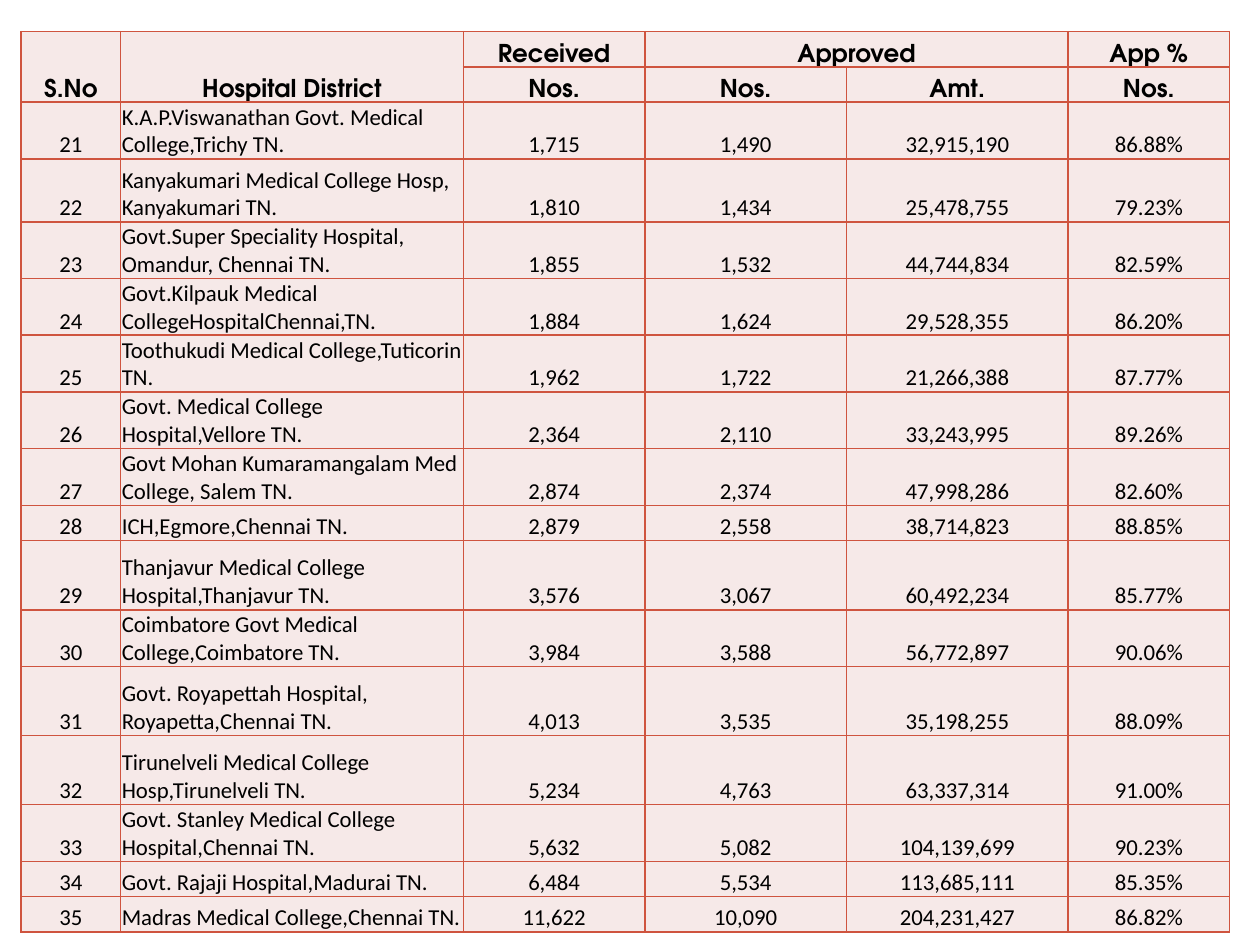
from pptx import Presentation
from pptx.dml.color import RGBColor
from pptx.enum import text
from pptx.oxml import parse_xml
from pptx.oxml.ns import nsdecls
from pptx.util import Pt

COLORS = {"border": "CF543F", "fill": "F6E9E8", "ink": "000000"}
HEADER_FONT = {"name": "TeX Gyre Adventor", "size": Pt(14), "bold": True}
BODY_FONT = {"name": "Calibri", "size": Pt(13), "bold": False}
CELL_FORMAT = {
    "margin_left": Pt(0.7), "margin_top": Pt(0.7),
    "margin_right": Pt(0.7), "margin_bottom": Pt(0),
    "vertical_anchor": text.MSO_ANCHOR.BOTTOM,
}

COLUMN_WIDTHS = [57, 195.8, 103.7, 115.2, 126.7, 92.2]
SINGLE, DOUBLE = 20.2, 31.7  # row heights for one and two lines of text
HEADERS = [
    ["S.No", "Hospital District", "Received", "Approved", "", "App %"],
    ["", "", "Nos.", "Nos.", "Amt.", "Nos."],
]
HEADER_MERGES = [((0, 0), (1, 0)), ((0, 1), (1, 1)), ((0, 3), (0, 4))]
FIRST_NUMBER = 21
NAME_COLUMN = 1

# Row height, hospital, received, approved, amount, approval rate
HOSPITALS = [
    (DOUBLE, "K.A.P.Viswanathan Govt. Medical College,Trichy TN.", "1,715", "1,490", "32,915,190", "86.88%"),
    (36, "Kanyakumari Medical College Hosp, Kanyakumari TN.", "1,810", "1,434", "25,478,755", "79.23%"),
    (DOUBLE, "Govt.Super Speciality Hospital, Omandur, Chennai TN.", "1,855", "1,532", "44,744,834", "82.59%"),
    (DOUBLE, "Govt.Kilpauk Medical CollegeHospitalChennai,TN.", "1,884", "1,624", "29,528,355", "86.20%"),
    (DOUBLE, "Toothukudi Medical College,Tuticorin TN.", "1,962", "1,722", "21,266,388", "87.77%"),
    (DOUBLE, "Govt. Medical College Hospital,Vellore TN.", "2,364", "2,110", "33,243,995", "89.26%"),
    (DOUBLE, "Govt Mohan Kumaramangalam Med College, Salem TN.", "2,874", "2,374", "47,998,286", "82.60%"),
    (SINGLE, "ICH,Egmore,Chennai TN.", "2,879", "2,558", "38,714,823", "88.85%"),
    (39.5, "Thanjavur Medical College Hospital,Thanjavur TN.", "3,576", "3,067", "60,492,234", "85.77%"),
    (DOUBLE, "Coimbatore Govt Medical College,Coimbatore TN.", "3,984", "3,588", "56,772,897", "90.06%"),
    (39.5, "Govt. Royapettah Hospital, Royapetta,Chennai TN.", "4,013", "3,535", "35,198,255", "88.09%"),
    (39.5, "Tirunelveli Medical College Hosp,Tirunelveli TN.", "5,234", "4,763", "63,337,314", "91.00%"),
    (DOUBLE, "Govt. Stanley Medical College Hospital,Chennai TN.", "5,632", "5,082", "104,139,699", "90.23%"),
    (SINGLE, "Govt. Rajaji Hospital,Madurai TN.", "6,484", "5,534", "113,685,111", "85.35%"),
    (SINGLE, "Madras Medical College,Chennai TN.", "11,622", "10,090", "204,231,427", "86.82%"),
]


def apply_format(target, values):
    for attribute, value in values.items():
        setattr(target, attribute, value)


def add_borders(cell):
    properties = cell._tc.get_or_add_tcPr()
    for position, side in enumerate(("lnL", "lnR", "lnT", "lnB")):
        properties.insert(position, parse_xml(
            f'<a:{side} {nsdecls("a")} w="{Pt(1)}"><a:solidFill>'
            f'<a:srgbClr val="{COLORS["border"]}"/></a:solidFill></a:{side}>'))


def fill_cell(cell, wording, font, align):
    apply_format(cell, CELL_FORMAT)
    cell.fill.solid()
    cell.fill.fore_color.rgb = RGBColor.from_string(COLORS["fill"])
    add_borders(cell)
    paragraph = cell.text_frame.paragraphs[0]
    paragraph.alignment = align
    apply_format(paragraph.font, font)
    if wording:
        run = paragraph.add_run()
        run.text = wording
        apply_format(run.font, font)
        run.font.color.rgb = RGBColor.from_string(COLORS["ink"])


def add_hospital_table(slide):
    numbered = [[str(number), *hospital[1:]]
                for number, hospital in enumerate(HOSPITALS, FIRST_NUMBER)]
    entries = HEADERS + numbered
    heights = [SINGLE] * len(HEADERS) + [hospital[0] for hospital in HOSPITALS]
    hospitals = slide.shapes.add_table(
        len(entries), len(COLUMN_WIDTHS), Pt(12), Pt(18),
        Pt(sum(COLUMN_WIDTHS)), Pt(sum(heights))).table
    apply_format(hospitals, {"first_row": False, "horz_banding": False})

    # Grid
    for column, width in zip(hospitals.columns, COLUMN_WIDTHS):
        column.width = Pt(width)
    for row, height in zip(hospitals.rows, heights):
        row.height = Pt(height)

    # Headings and hospital figures
    for r, entry in enumerate(entries):
        is_header = r < len(HEADERS)
        for c, wording in enumerate(entry):
            is_name = c == NAME_COLUMN and not is_header
            fill_cell(hospitals.cell(r, c), wording,
                      HEADER_FONT if is_header else BODY_FONT,
                      text.PP_ALIGN.LEFT if is_name else text.PP_ALIGN.CENTER)

    # Headings that span rows or columns
    for first, last in HEADER_MERGES:
        hospitals.cell(*first).merge(hospitals.cell(*last))


def main():
    deck = Presentation()
    apply_format(deck, {"slide_width": Pt(720), "slide_height": Pt(540)})
    slide = deck.slides.add_slide(deck.slide_layouts[6])
    add_hospital_table(slide)
    deck.save("out.pptx")


if __name__ == "__main__":
    main()
